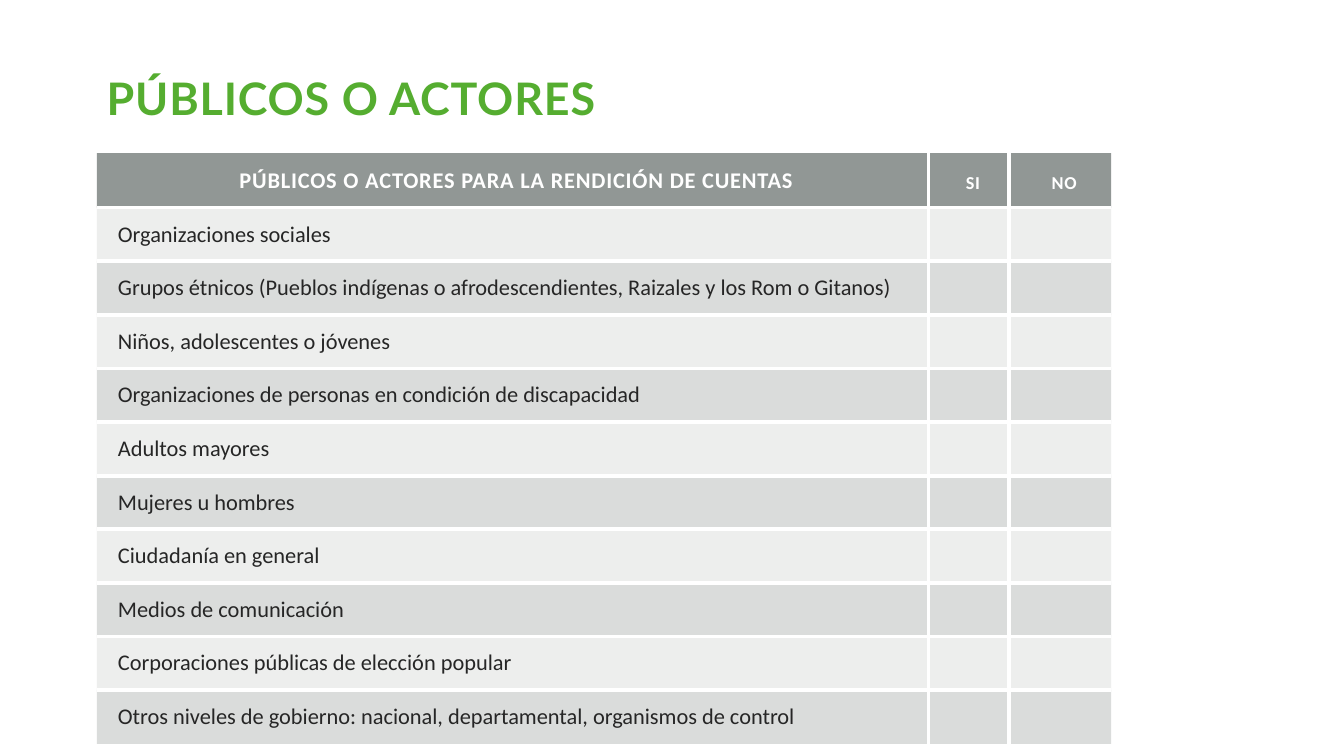
from lxml import etree
from pptx import Presentation
from pptx.dml.color import RGBColor
from pptx.enum.text import MSO_ANCHOR as Anchor, PP_ALIGN as Align
from pptx.oxml.ns import qn
from pptx.util import Inches, Pt

COLORS = {
    "title": "55AD30",
    "header": "636B68",
    "band": "878E8B",
    "text": "262626",
    "white": "FFFFFF",
}
HEADERS = [("PÚBLICOS O ACTORES PARA LA RENDICIÓN DE CUENTAS", 16), ("SI", 13), ("NO", 13)]
AUDIENCES = [
    "Organizaciones sociales",
    "Grupos étnicos (Pueblos indígenas o afrodescendientes, Raizales y los Rom o Gitanos)",
    "Niños, adolescentes o jóvenes",
    "Organizaciones de personas en condición de discapacidad",
    "Adultos mayores",
    "Mujeres u hombres",
    "Ciudadanía en general",
    "Medios de comunicación",
    "Corporaciones públicas de elección popular",
    "Otros niveles de gobierno: nacional, departamental, organismos de control",
]
COLUMN_WIDTHS = [8.25, 0.8, 1.01]
HEADER_HEIGHT, ROW_HEIGHT = 0.54, 0.49
BORDER_WIDTH = Pt(3)


def add_run(paragraph, text, size, color, font="Calibri", bold=False, spacing=0):
    """Add a styled run; spacing is the letter spacing in points."""
    run = paragraph.add_run()
    run.text = text
    run.font.name = font
    run.font.size = Pt(size)
    run.font.bold = bold
    run.font.color.rgb = RGBColor.from_string(COLORS[color])
    if spacing:
        run._r.get_or_add_rPr().set("spc", str(round(spacing * 100)))


def fill_cell(cell, color, opacity):
    """Fill the cell with a partly transparent colour; opacity is a percentage."""
    cell.fill.solid()
    cell.fill.fore_color.rgb = RGBColor.from_string(COLORS[color])
    srgb = cell._tc.tcPr.find(".//" + qn("a:srgbClr"))
    etree.SubElement(srgb, qn("a:alpha"), val=str(opacity * 1000))


def set_borders(cell, inner_sides):
    """Draw white lines on the inner sides and none on the table's outer edge."""
    properties = cell._tc.get_or_add_tcPr()
    for index, side in enumerate("LRTB"):
        line = etree.Element(qn(f"a:ln{side}"), w=str(BORDER_WIDTH))
        if side in inner_sides:
            fill = etree.SubElement(line, qn("a:solidFill"))
            etree.SubElement(fill, qn("a:srgbClr"), val=COLORS["white"])
        else:
            etree.SubElement(line, qn("a:noFill"))
        properties.insert(index, line)


def write_cell(cell, text, size, color, **style):
    cell.margin_left = Inches(0.21)
    cell.margin_right = cell.margin_top = cell.margin_bottom = Inches(0.13)
    add_run(cell.text_frame.paragraphs[0], text, size, color, **style)


def add_title(slide, left, top, width, height):
    box = slide.shapes.add_textbox(Inches(left), Inches(top), Inches(width), Inches(height))
    box.text_frame.word_wrap = True
    add_run(box.text_frame.paragraphs[0], "PÚBLICOS O ACTORES", 32, "title",
            font="Lato", bold=True, spacing=0.6)


def add_audience_table(slide, left, top):
    row_count, column_count = len(AUDIENCES) + 1, len(HEADERS)
    height = HEADER_HEIGHT + ROW_HEIGHT * len(AUDIENCES)
    table = slide.shapes.add_table(
        row_count, column_count, Inches(left), Inches(top),
        Inches(sum(COLUMN_WIDTHS)), Inches(height)).table
    table.first_row = table.horz_banding = False
    for column, width in zip(table.columns, COLUMN_WIDTHS):
        column.width = Inches(width)

    for row_index, row in enumerate(table.rows):
        is_header = row_index == 0
        row.height = Inches(HEADER_HEIGHT if is_header else ROW_HEIGHT)
        for column_index, cell in enumerate(row.cells):
            if is_header:
                fill_cell(cell, "header", 70)
                text, size = HEADERS[column_index]
                write_cell(cell, text, size, "white", bold=True, spacing=0.6)
                cell.text_frame.paragraphs[0].alignment = Align.CENTER
                cell.vertical_anchor = Anchor.BOTTOM
            else:
                fill_cell(cell, "band", 15 if row_index % 2 else 30)
                if column_index == 0:
                    write_cell(cell, AUDIENCES[row_index - 1], 16, "text")
            inner = {"L": column_index > 0, "R": column_index < column_count - 1,
                     "T": row_index > 0, "B": row_index < row_count - 1}
            set_borders(cell, [side for side, is_inner in inner.items() if is_inner])


def main():
    presentation = Presentation()
    presentation.slide_width = Inches(13.33)
    presentation.slide_height = Inches(7.5)
    slide = presentation.slides.add_slide(presentation.slide_layouts[6])
    add_audience_table(slide, 0.96, 1.52)
    add_title(slide, 0.96, 0.65, 5.37, 0.64)
    presentation.save("out.pptx")


if __name__ == "__main__":
    main()
